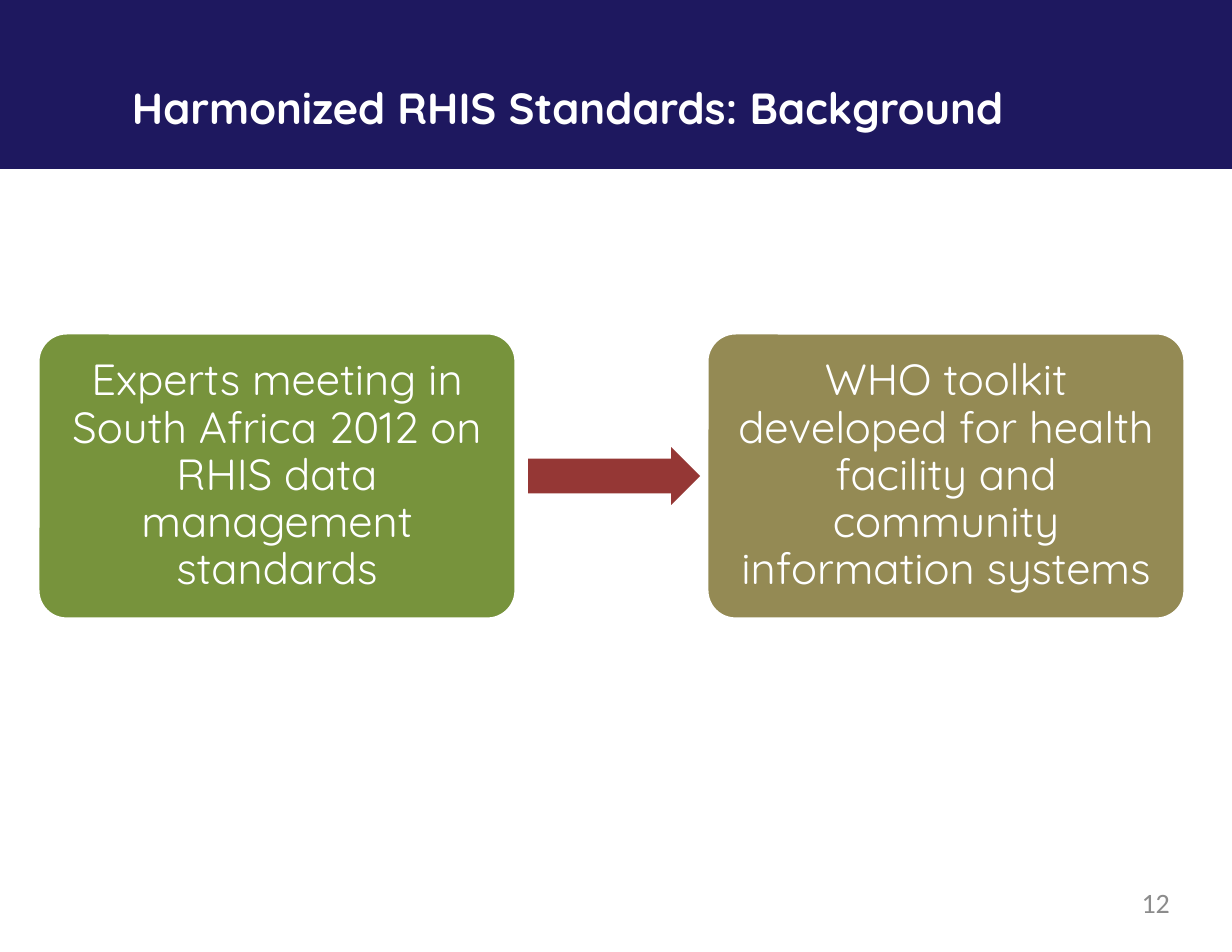
from dataclasses import dataclass

from pptx import Presentation
from pptx import util as u
from pptx.dml.color import RGBColor
from pptx.enum import shapes, text

PX = u.Inches(1) // 112


@dataclass(frozen=True)
class Theme:
    navy: str = "1E185F"
    green: str = "77933C"
    olive: str = "948A54"
    red: str = "953735"
    white: str = "FFFFFF"
    grey: str = "8C8C8C"
    font: str = "Quicksand"
    number_font: str = "Calibri"
    body_size: int = 28
    number_size: int = 18


theme = Theme()


def add_block(kind, left, top, width, height, color):
    block = page.shapes.add_shape(kind, left * PX, top * PX, width * PX, height * PX)
    block.shadow.inherit = False
    block.fill.solid()
    block.fill.fore_color.rgb = RGBColor.from_string(color)
    block.line.fill.background()
    return block


def write(box, words, align, inset=0, anchor=text.MSO_ANCHOR.TOP, font=theme.font,
          size=theme.body_size, color=theme.white, bold=False):
    """Fill a shape with one formatted paragraph and return the paragraph."""
    frame = box.text_frame
    frame.word_wrap = True
    frame.auto_size = text.MSO_AUTO_SIZE.NONE
    frame.vertical_anchor = anchor
    frame.margin_left = frame.margin_right = inset * PX
    frame.margin_top = frame.margin_bottom = inset * PX
    para = frame.paragraphs[0]
    para.text = words
    para.alignment = align
    para.font.name = font
    para.font.size = u.Pt(size)
    para.font.bold = bold
    para.font.color.rgb = RGBColor.from_string(color)
    return para


deck = Presentation()
deck.slide_width, deck.slide_height = 1232 * PX, 952 * PX
page = deck.slides.add_slide(deck.slide_layouts[5])

# Header band, with the title brought in front of it
add_block(shapes.MSO_SHAPE.RECTANGLE, 0, -1, 1232, 170, theme.navy)
title = page.shapes.title
page.shapes._spTree.append(title._element)
title.left, title.top, title.width, title.height = 132 * PX, 81 * PX, 970 * PX, 53 * PX
write(title, "Harmonized RHIS Standards: Background", text.PP_ALIGN.LEFT, bold=True)

# Two steps joined by an arrow
steps = [
    (38, theme.green, "Experts meeting in South Africa 2012 on RHIS data management standards"),
    (707, theme.olive,
     "WHO toolkit developed for health facility and community information systems"),
]
for left, color, words in steps:
    step = add_block(shapes.MSO_SHAPE.ROUNDED_RECTANGLE, left, 333, 478, 286, color)
    step.adjustments[0] = 0.1
    step.line.color.rgb = RGBColor.from_string(theme.white)
    step.line.width = u.Pt(2)
    para = write(step, words, text.PP_ALIGN.CENTER, inset=13, anchor=text.MSO_ANCHOR.MIDDLE)
    para.line_spacing = 0.9

arrow = add_block(shapes.MSO_SHAPE.RIGHT_ARROW, 528, 447, 172, 58, theme.red)
arrow.adjustments[0] = 0.6

number = page.shapes.add_textbox(887 * PX, 886 * PX, 283 * PX, 47 * PX)
write(number, "12", text.PP_ALIGN.RIGHT, font=theme.number_font,
      size=theme.number_size, color=theme.grey)

deck.save("out.pptx")
